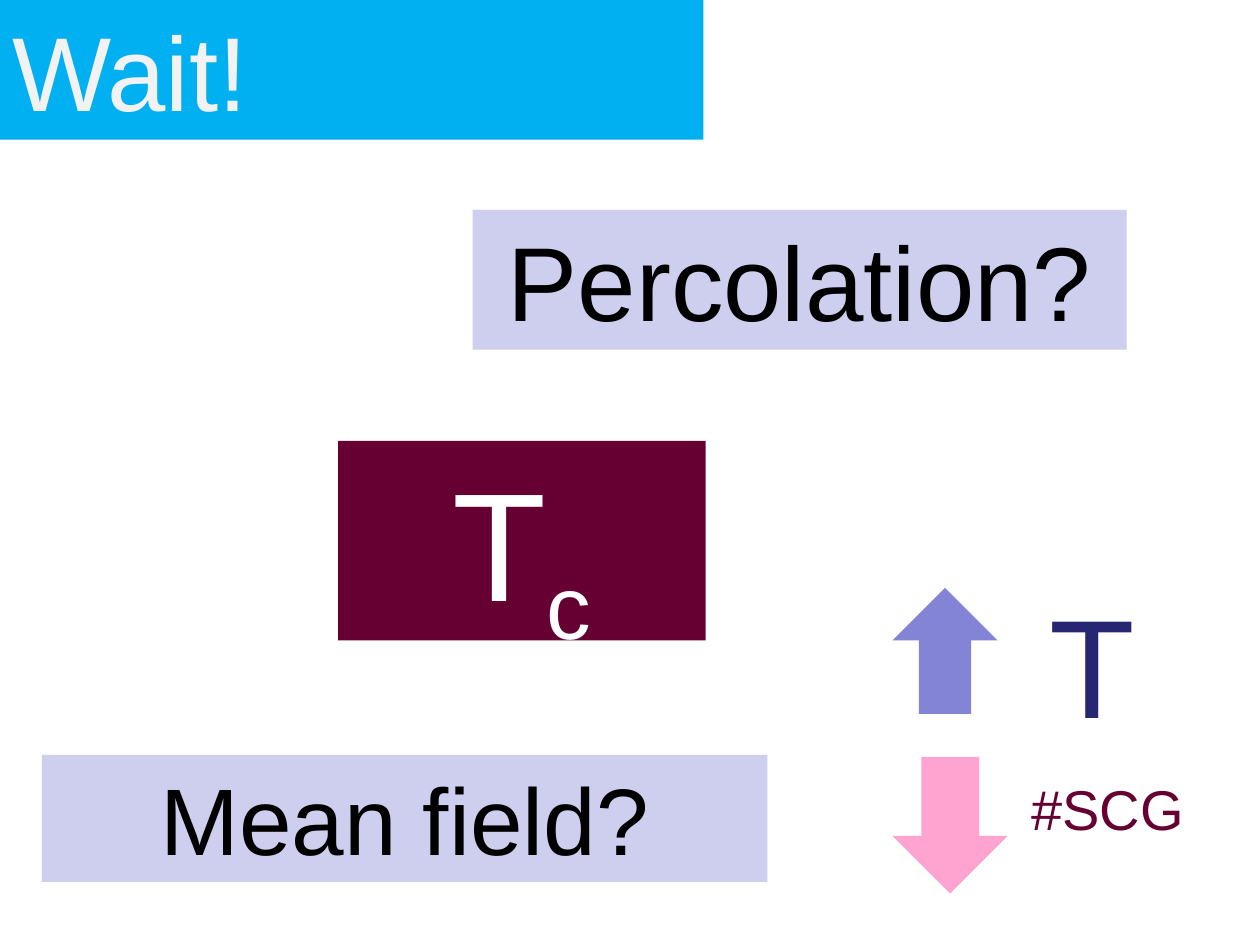
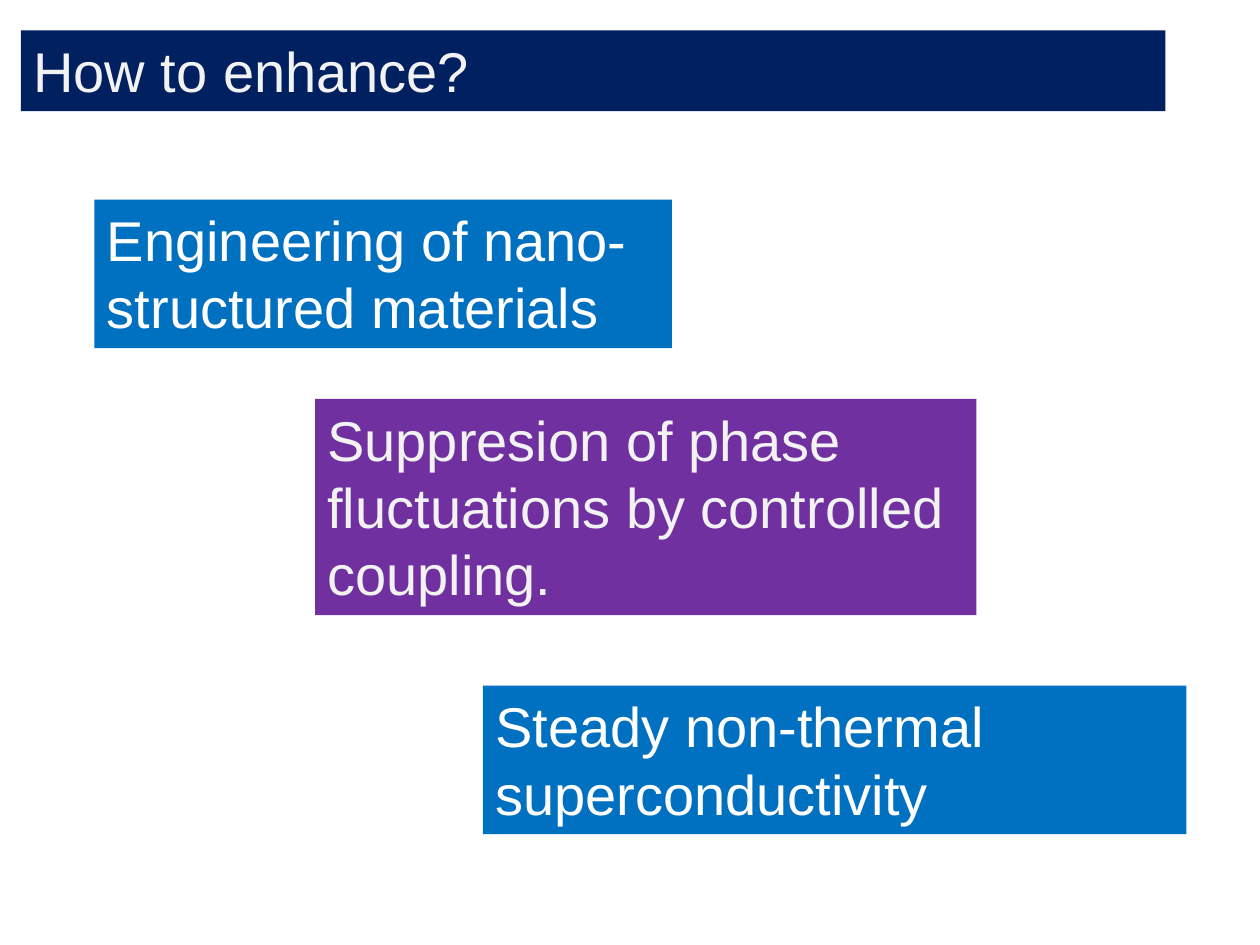
from typing import NamedTuple, Optional

from lxml import etree
from pptx import Presentation
from pptx.dml.color import RGBColor
from pptx.enum.shapes import MSO_SHAPE as SHAPE
from pptx.enum.text import MSO_ANCHOR, MSO_AUTO_SIZE, PP_ALIGN
from pptx.oxml.ns import qn
from pptx.util import Inches, Pt

FONT = "Arial"
WHITE = RGBColor(0xFF, 0xFF, 0xFF)
OFF_WHITE = RGBColor(0xF2, 0xF2, 0xF2)
BLACK = RGBColor(0x00, 0x00, 0x00)
SKY = RGBColor(0x00, 0xB0, 0xF0)
LAVENDER = RGBColor(0xCE, 0xCE, 0xEF)
WINE = RGBColor(0x66, 0x00, 0x33)
PERIWINKLE = RGBColor(0x75, 0x75, 0xD1)
INDIGO = RGBColor(0x26, 0x26, 0x73)
PINK = RGBColor(0xFF, 0x99, 0xCC)
NAVY = RGBColor(0x00, 0x20, 0x60)
BLUE = RGBColor(0x00, 0x70, 0xC0)
PURPLE = RGBColor(0x70, 0x30, 0xA0)

# The slide is a grid of 120 columns by 90 rows
SLIDE_W, SLIDE_H = Inches(10), Inches(7.5)
COL, ROW = SLIDE_W / 120, SLIDE_H / 90
ARROW_COL, LABEL_COL = 85, 96
ARROW_ALPHA = 89


class Cell(NamedTuple):
    col: float
    row: float
    cols: float
    rows: float

    def box(self) -> tuple[int, int, int, int]:
        return (round(self.col * COL), round(self.row * ROW),
                round(self.cols * COL), round(self.rows * ROW))


class Label(NamedTuple):
    text: str
    cell: Cell
    size: int
    color: RGBColor
    fill: Optional[RGBColor] = None
    align: PP_ALIGN = PP_ALIGN.LEFT
    subscript: str = ""


class Trend(NamedTuple):
    """An arrow and the quantity that rises or falls."""
    shape: SHAPE
    cell: Cell
    fill: RGBColor
    label: Label


CENTER = PP_ALIGN.CENTER

WAIT_LABELS = [
    Label("Wait!", Cell(0, 0, 67, 13.3), 60, OFF_WHITE, SKY),
    Label("Percolation?", Cell(45, 20, 62.3, 13.3), 60, BLACK, LAVENDER, CENTER),
    Label("Mean field?", Cell(4, 71.9, 69.1, 12.1), 54, BLACK, LAVENDER, CENTER),
    Label("T", Cell(32.2, 42, 35, 19), 88, WHITE, WINE, CENTER, "c"),
]

TRENDS = [
    Trend(SHAPE.UP_ARROW, Cell(ARROW_COL, 56, 10, 12), PERIWINKLE,
          Label("T", Cell(LABEL_COL, 54.5, 16, 17.4), 80, INDIGO, align=CENTER)),
    Trend(SHAPE.DOWN_ARROW, Cell(ARROW_COL, 72.1, 11, 13), PINK,
          Label("#SCG", Cell(LABEL_COL, 73.2, 19, 7.7), 32, WINE, align=CENTER)),
]

ENHANCE_LABELS = [
    Label("How to enhance?", Cell(2, 2.9, 109, 7.7), 32, OFF_WHITE, NAVY),
    Label("Engineering of nano-structured materials",
          Cell(9, 19, 55, 14.15), 32, WHITE, BLUE),
    Label("Suppresion of phase fluctuations by controlled coupling.",
          Cell(30, 38, 63, 20.6), 32, OFF_WHITE, PURPLE),
    Label("Steady non-thermal superconductivity",
          Cell(46, 65.3, 67, 14.15), 32, WHITE, BLUE),
]


def add_label(shapes, label: Label) -> None:
    sp = shapes.add_textbox(*label.cell.box())
    if label.fill is not None:
        sp.fill.solid()
        sp.fill.fore_color.rgb = label.fill
    tf = sp.text_frame
    tf.text = label.text
    tf.word_wrap = True
    tf.auto_size = MSO_AUTO_SIZE.SHAPE_TO_FIT_TEXT
    tf.vertical_anchor = MSO_ANCHOR.TOP
    p = tf.paragraphs[0]
    p.alignment = label.align
    if label.subscript:
        r = p.add_run()
        r.text = label.subscript
        r._r.get_or_add_rPr().set("baseline", "-25000")
    for r in p.runs:
        r.font.name = FONT
        r.font.size = Pt(label.size)
        r.font.color.rgb = label.color


def add_trend(slide, trend: Trend) -> None:
    group = slide.shapes.add_group_shape()
    sp = group.shapes.add_shape(trend.shape, *trend.cell.box())
    sp.shadow.inherit = False
    sp.line.fill.background()
    sp.fill.solid()
    sp.fill.fore_color.rgb = trend.fill
    color = sp._element.spPr.find(qn("a:solidFill"))[0]
    etree.SubElement(color, qn("a:alpha")).set("val", str(ARROW_ALPHA * 1000))
    add_label(group.shapes, trend.label)


def add_slide(prs, labels: list[Label], trends: list[Trend]) -> None:
    slide = prs.slides.add_slide(prs.slide_layouts[6])
    for label in labels:
        add_label(slide.shapes, label)
    for trend in trends:
        add_trend(slide, trend)


def main() -> None:
    prs = Presentation()
    prs.slide_width, prs.slide_height = SLIDE_W, SLIDE_H
    add_slide(prs, WAIT_LABELS, TRENDS)
    add_slide(prs, ENHANCE_LABELS, [])
    prs.save("out.pptx")


if __name__ == "__main__":
    main()
